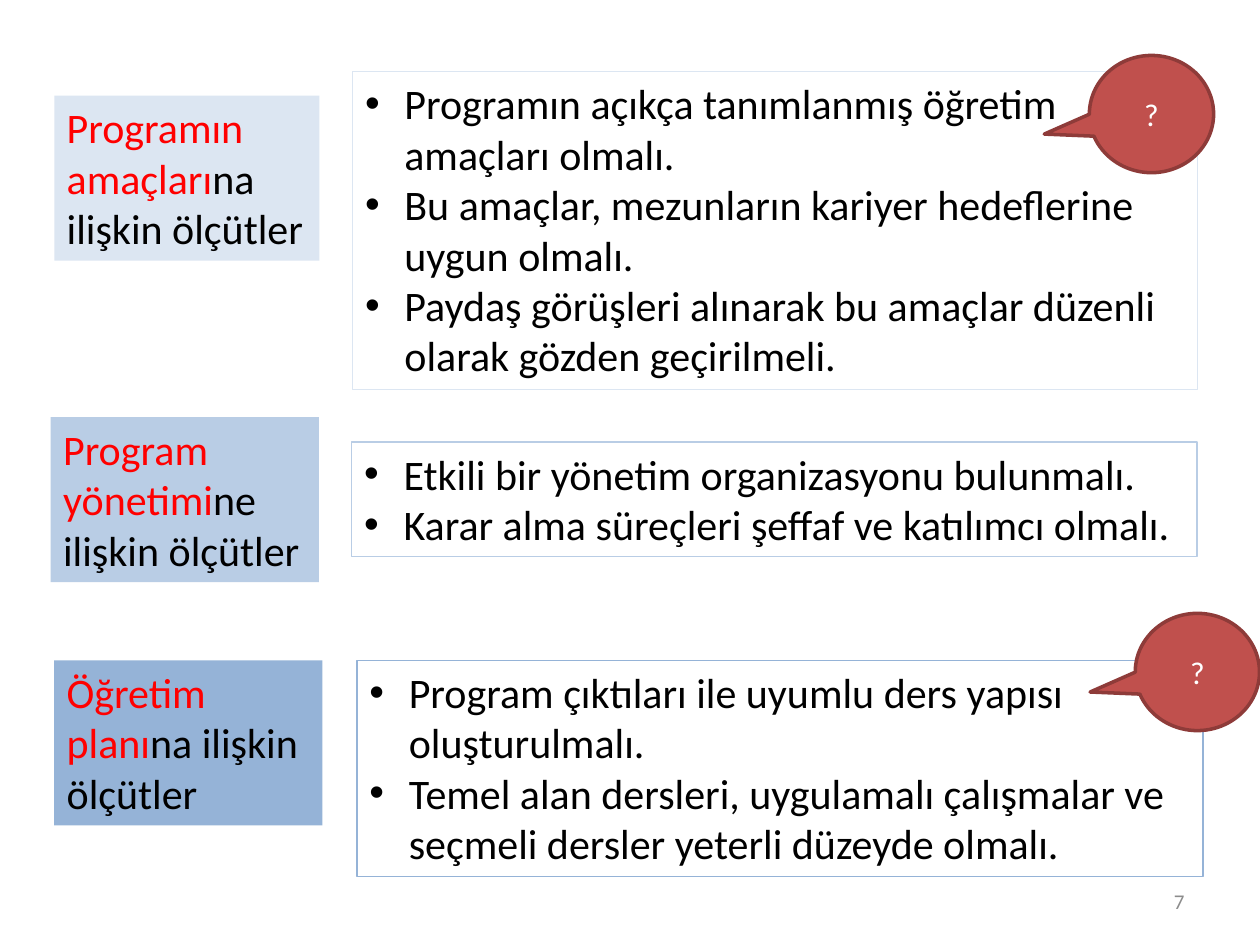
from lxml import etree
from pptx import Presentation
from pptx.dml.color import RGBColor
from pptx.enum.shapes import MSO_SHAPE
from pptx.enum.text import MSO_ANCHOR, MSO_AUTO_SIZE, PP_ALIGN
from pptx.oxml.ns import qn
from pptx.util import Pt

CALLOUT = MSO_SHAPE.OVAL_CALLOUT
MIDDLE = MSO_ANCHOR.MIDDLE
GROW = MSO_AUTO_SIZE.SHAPE_TO_FIT_TEXT
CENTER, RIGHT = PP_ALIGN.CENTER, PP_ALIGN.RIGHT

FONT = "Calibri"
BODY_SIZE = 24
BULLET_INDENT = 22.5
BLACK, RED, WHITE, GRAY = "000000", "FF0000", "FFFFFF", "8C8C8C"
CALLOUT_FILL, CALLOUT_LINE = "C0504D", "8E3B39"

# Colour, label box, highlighted and plain label text, criteria box, criteria
ROWS = [
    ("DCE6F2", (31, 54.7, 151.5, 94.3), "Programın amaçları", "na ilişkin ölçütler",
     (201.5, 41, 483, 181.5),
     ["Programın açıkça tanımlanmış öğretim amaçları olmalı.",
      "Bu amaçlar, mezunların kariyer hedeflerine uygun olmalı.",
      "Paydaş görüşleri alınarak bu amaçlar düzenli olarak gözden geçirilmeli."]),
    ("B9CDE5", (29, 238.3, 153.3, 94.3), "Program yönetimi", "ne ilişkin ölçütler",
     (201, 252.5, 483, 65.5),
     ["Etkili bir yönetim organizasyonu bulunmalı.",
      "Karar alma süreçleri şeffaf ve katılımcı olmalı."]),
    ("95B3D7", (31, 377.3, 153.3, 94.3), "Öğretim planı", "na ilişkin ölçütler",
     (204, 377.3, 483.5, 123.7),
     ["Program çıktıları ile uyumlu ders yapısı oluşturulmalı.",
      "Temel alan dersleri, uygulamalı çalışmalar ve seçmeli dersler yeterli "
      "düzeyde olmalı."]),
]
CALLOUT_BOXES = [(622.5, 31.7, 71, 67), (648.7, 350.5, 71, 67)]
NUMBER_BOX = (516, 500.5, 168, 28.8)


def color(value):
    return RGBColor.from_string(value)


def add_run(paragraph, text, size, font_color):
    run = paragraph.add_run()
    run.text = text
    run.font.name = FONT
    run.font.size = Pt(size)
    run.font.color.rgb = color(font_color)


def add_text_box(slide, box):
    text_box = slide.shapes.add_textbox(*map(Pt, box))
    text_box.text_frame.word_wrap = True
    return text_box


def add_bullet(paragraph):
    """Give the paragraph a round bullet with a hanging indent."""
    properties = paragraph._p.get_or_add_pPr()
    properties.set("marL", str(Pt(BULLET_INDENT)))
    properties.set("indent", str(-Pt(BULLET_INDENT)))
    etree.SubElement(properties, qn("a:buFont"), typeface="Arial")
    etree.SubElement(properties, qn("a:buChar"), char="•")


def add_label(slide, box, fill, highlight, rest):
    label = add_text_box(slide, box)
    label.text_frame.auto_size = GROW
    label.fill.solid()
    label.fill.fore_color.rgb = color(fill)
    paragraph = label.text_frame.paragraphs[0]
    add_run(paragraph, highlight, BODY_SIZE, RED)
    add_run(paragraph, rest, BODY_SIZE, BLACK)


def add_criteria(slide, box, outline, criteria):
    panel = add_text_box(slide, box)
    frame = panel.text_frame
    frame.auto_size = GROW
    panel.line.color.rgb = color(outline)
    panel.line.width = Pt(0.75)
    for index, criterion in enumerate(criteria):
        paragraph = frame.add_paragraph() if index else frame.paragraphs[0]
        add_bullet(paragraph)
        add_run(paragraph, criterion, BODY_SIZE, BLACK)


def add_question_callout(slide, box):
    callout = slide.shapes.add_shape(CALLOUT, *map(Pt, box))
    callout.shadow.inherit = False
    callout.adjustments[0] = -0.863
    callout.adjustments[1] = 0.171
    callout.fill.solid()
    callout.fill.fore_color.rgb = color(CALLOUT_FILL)
    callout.line.color.rgb = color(CALLOUT_LINE)
    callout.line.width = Pt(2)
    callout.text_frame.vertical_anchor = MIDDLE
    paragraph = callout.text_frame.paragraphs[0]
    paragraph.alignment = CENTER
    add_run(paragraph, "?", 18, WHITE)


def add_slide_number(slide, box, number):
    frame = add_text_box(slide, box).text_frame
    frame.vertical_anchor = MIDDLE
    paragraph = frame.paragraphs[0]
    paragraph.alignment = RIGHT
    add_run(paragraph, number, 12, GRAY)


def main():
    presentation = Presentation()
    presentation.slide_width, presentation.slide_height = Pt(720), Pt(540)
    slide = presentation.slides.add_slide(presentation.slide_layouts[6])
    add_slide_number(slide, NUMBER_BOX, "7")
    for row_color, label_box, highlight, rest, criteria_box, criteria in ROWS:
        add_criteria(slide, criteria_box, row_color, criteria)
        add_label(slide, label_box, row_color, highlight, rest)
    for box in CALLOUT_BOXES:
        add_question_callout(slide, box)
    presentation.save("out.pptx")


if __name__ == "__main__":
    main()
